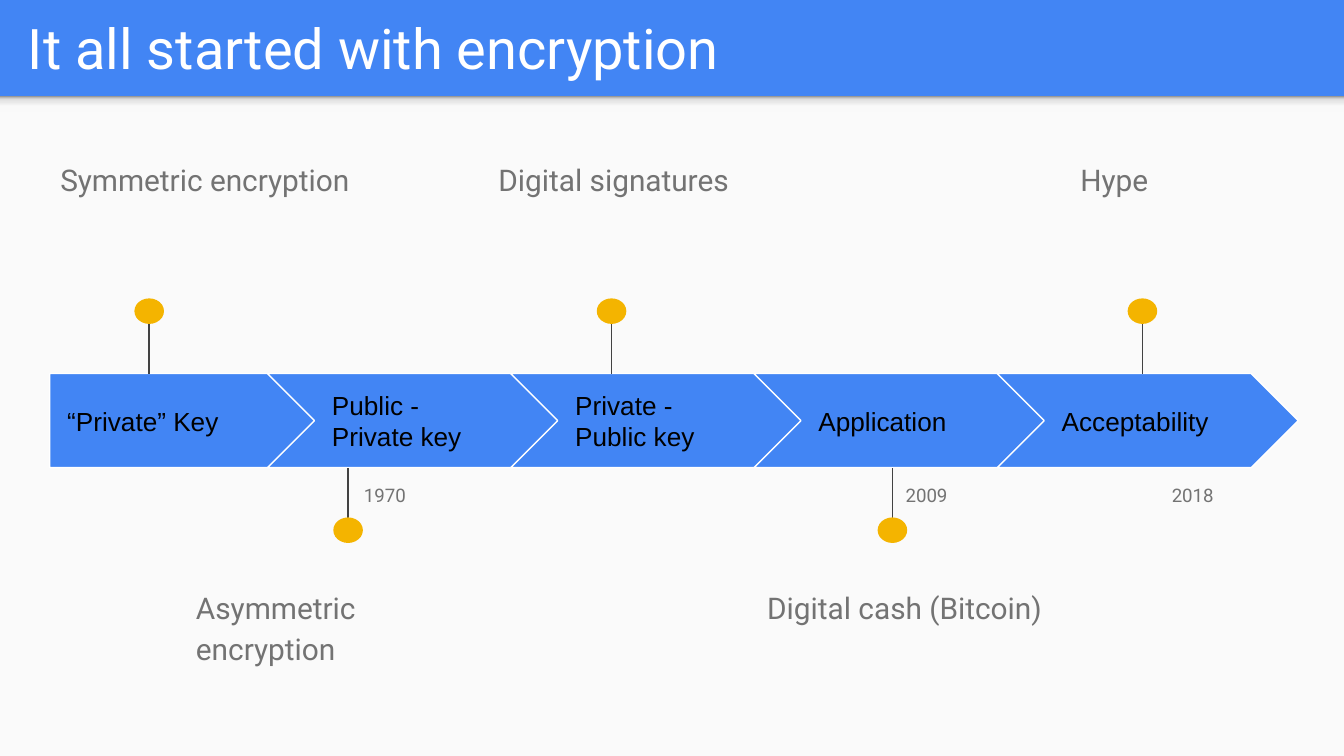
from copy import deepcopy
from dataclasses import dataclass

from lxml import etree
from pptx import Presentation
from pptx.dml.color import RGBColor
from pptx.enum.shapes import MSO_CONNECTOR, MSO_SHAPE
from pptx.enum.text import MSO_ANCHOR, PP_ALIGN
from pptx.oxml.ns import qn
from pptx.util import Inches, Pt

BLUE = RGBColor(0x42, 0x85, 0xF4)
PAPER = RGBColor(0xFA, 0xFA, 0xFA)
WHITE = RGBColor(0xFF, 0xFF, 0xFF)
BLACK = RGBColor(0x00, 0x00, 0x00)
GREY = RGBColor(0x73, 0x73, 0x73)
DARK = RGBColor(0x42, 0x42, 0x42)
AMBER = RGBColor(0xF4, 0xB4, 0x00)
SHADOW_STOPS = [
    (0, RGBColor(0xF9, 0xF9, 0xF9)),
    (0.36, RGBColor(0xF9, 0xF9, 0xF9)),
    (0.8, RGBColor(0xDE, 0xDE, 0xDE)),
    (1, RGBColor(0x99, 0x99, 0x99)),
]

RECTANGLE = MSO_SHAPE.RECTANGLE
PENTAGON = MSO_SHAPE.PENTAGON
CHEVRON = MSO_SHAPE.CHEVRON
OVAL = MSO_SHAPE.OVAL
STRAIGHT = MSO_CONNECTOR.STRAIGHT
LEFT = PP_ALIGN.LEFT
TOP = MSO_ANCHOR.TOP
MIDDLE = MSO_ANCHOR.MIDDLE

PAGE_WIDTH = 10
PAGE_HEIGHT = PAGE_WIDTH * 9 / 16
PAPER_HEIGHT = 4.91
HEADER_HEIGHT = PAGE_HEIGHT - PAPER_HEIGHT
BAND_TOP, BAND_HEIGHT = 2.78, 0.7
BAND_BOTTOM = BAND_TOP + BAND_HEIGHT
FIRST_LEFT, FIRST_WIDTH = 0.37, 2.05
CHEVRON_LEFT, CHEVRON_STEP, CHEVRON_WIDTH = 1.99, 1.81, 2.24
STEM = 0.52
DOT_WIDTH, DOT_HEIGHT = 0.22, 0.19
ABOVE_DOT_TOP, BELOW_DOT_TOP = 2.22, 3.85
ABOVE_LABEL_TOP, BELOW_LABEL_TOP = 1.06, 4.25


@dataclass
class Stage:
    name: str
    event: str
    pin_x: float
    label_left: float
    label_width: float = 2.45
    label_height: float = 0.85


@dataclass
class Year:
    text: str
    left: float


STAGES = [
    Stage("“Private” Key", "Symmetric encryption", 1.11, 0.35),
    Stage("Public - Private key", "Asymmetric encryption", 2.59, 1.36, label_height=0.49),
    Stage("Private - Public key", "Digital signatures", 4.55, 3.61),
    Stage("Application", "Digital cash (Bitcoin)", 6.64, 5.61),
    Stage("Acceptability", "Hype", 8.5, 7.94, 1.19, 0.39),
]
YEARS = [Year("1970", 2.61), Year("2018", 8.62), Year("2009", 6.64)]


def write_text(shape, text: str, *, size: float, color: RGBColor, font: str = "Roboto",
               anchor=TOP, inset: float = 0.1, line_spacing: float = 1.0,
               space_after: float = 0) -> None:
    frame = shape.text_frame
    frame.word_wrap = True
    frame.vertical_anchor = anchor
    frame.margin_left = frame.margin_right = Inches(inset)
    frame.margin_top = frame.margin_bottom = Inches(inset)
    para = frame.paragraphs[0]
    para.alignment = LEFT
    para.line_spacing = line_spacing
    para.space_after = Pt(space_after)
    span = para.add_run()
    span.text = text
    span.font.name = font
    span.font.size = Pt(size)
    span.font.color.rgb = color


def add_text(page, left: float, top: float, width: float, height: float,
             text: str, **text_format) -> None:
    box = page.shapes.add_textbox(Inches(left), Inches(top), Inches(width), Inches(height))
    write_text(box, text, **text_format)


def add_filled(page, kind, left: float, top: float, width: float, height: float,
               color: RGBColor):
    shape = page.shapes.add_shape(kind, Inches(left), Inches(top), Inches(width), Inches(height))
    shape.shadow.inherit = False
    shape.fill.solid()
    shape.fill.fore_color.rgb = color
    shape.line.fill.background()
    return shape


def add_header(page) -> None:
    page.background.fill.solid()
    page.background.fill.fore_color.rgb = BLUE
    add_filled(page, RECTANGLE, 0, HEADER_HEIGHT, PAGE_WIDTH, PAPER_HEIGHT, PAPER)

    shade = add_filled(page, RECTANGLE, 0, HEADER_HEIGHT, PAGE_WIDTH, 0.12, PAPER)
    shade.fill.gradient()
    shade.fill.gradient_angle = 90
    stop_list = shade._element.spPr.find(qn("a:gradFill")).find(qn("a:gsLst"))
    while len(stop_list) < len(SHADOW_STOPS):
        stop_list.append(deepcopy(stop_list[0]))
    for stop, (position, color) in zip(shade.fill.gradient_stops, SHADOW_STOPS):
        stop.position = position
        stop.color.rgb = color

    add_text(page, 0.11, 0.02, 9.65, 0.66, "It all started with encryption",
             size=30, color=WHITE, anchor=MIDDLE, space_after=4)


def add_arrow(page, index: int, name: str) -> None:
    if index == 0:
        kind, left, width = PENTAGON, FIRST_LEFT, FIRST_WIDTH
    else:
        kind, width = CHEVRON, CHEVRON_WIDTH
        left = CHEVRON_LEFT + (index - 1) * CHEVRON_STEP
    arrow = add_filled(page, kind, left, BAND_TOP, width, BAND_HEIGHT, BLUE)
    arrow.adjustments[0] = 0.5
    arrow.line.color.rgb = WHITE
    arrow.line.width = Pt(0.75)
    write_text(arrow, name, size=14, color=BLACK, font="Arial", anchor=MIDDLE, inset=0.13)


def add_pin(page, x: float, above: bool) -> None:
    """Draw a stem from the band to a dot above or below it."""
    near, far = (BAND_TOP, BAND_TOP - STEM) if above else (BAND_BOTTOM, BAND_BOTTOM + STEM)
    stem = page.shapes.add_connector(STRAIGHT, Inches(x), Inches(far), Inches(x), Inches(near))
    stem.line.color.rgb = DARK
    stem.line.width = Pt(0.75)
    etree.SubElement(stem._element.spPr, qn("a:effectLst"))
    dot_top = ABOVE_DOT_TOP if above else BELOW_DOT_TOP
    add_filled(page, OVAL, x - DOT_WIDTH / 2, dot_top, DOT_WIDTH, DOT_HEIGHT, AMBER)


def add_stage(page, index: int, stage: Stage) -> None:
    above = index % 2 == 0
    add_arrow(page, index, stage.name)
    add_pin(page, stage.pin_x, above)
    add_text(page, stage.label_left, ABOVE_LABEL_TOP if above else BELOW_LABEL_TOP,
             stage.label_width, stage.label_height, stage.event,
             size=16, color=GREY, line_spacing=1.15, space_after=16)


def main() -> None:
    deck = Presentation()
    deck.slide_width = Inches(PAGE_WIDTH)
    deck.slide_height = Inches(PAGE_HEIGHT)
    page = deck.slides.add_slide(deck.slide_layouts[6])
    add_header(page)
    for index, stage in enumerate(STAGES):
        add_stage(page, index, stage)
    for year in YEARS:
        add_text(page, year.left, BAND_BOTTOM, 0.52, 0.46, year.text,
                 size=10, color=GREY, line_spacing=1.15, space_after=16)
    deck.save("out.pptx")


if __name__ == "__main__":
    main()
